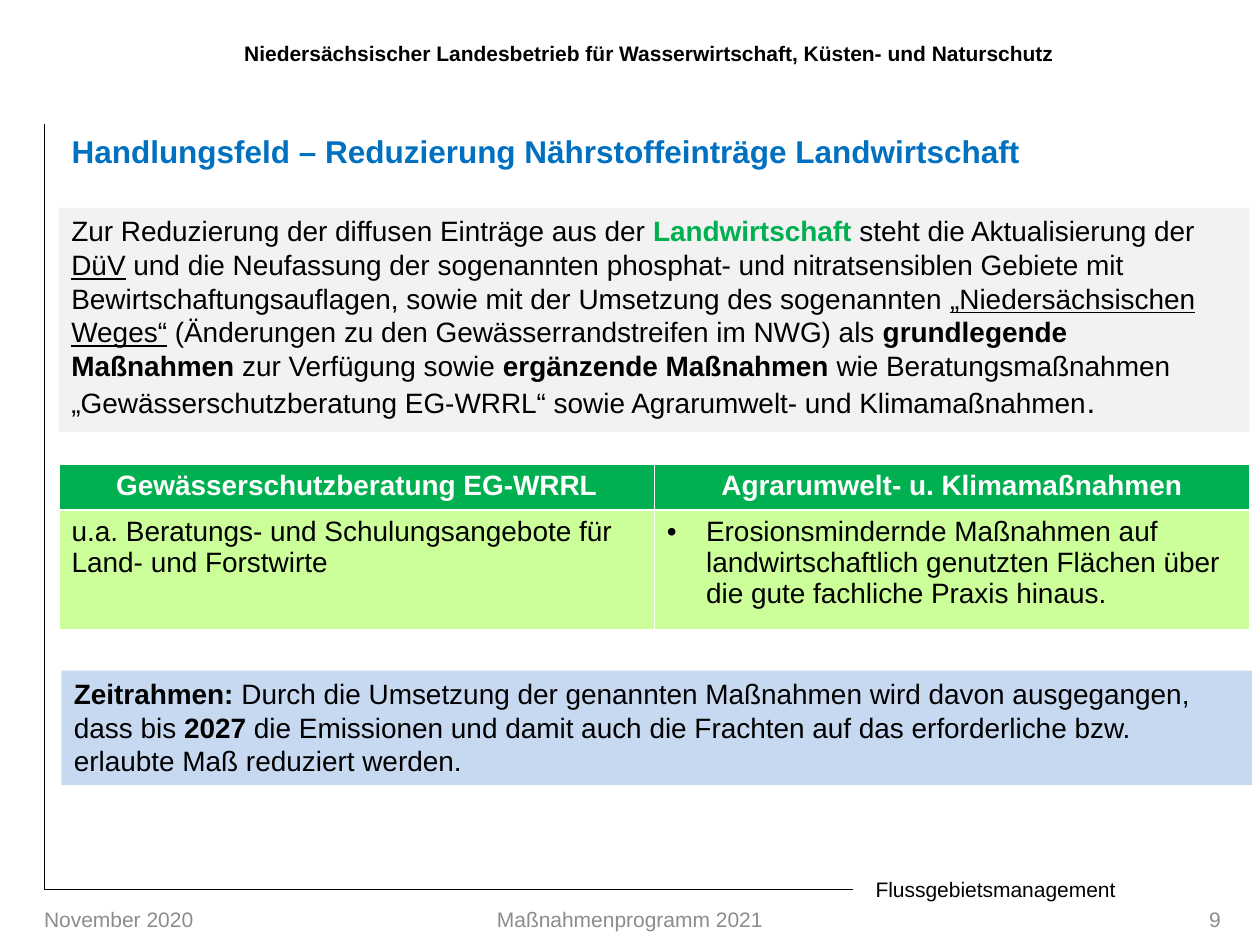
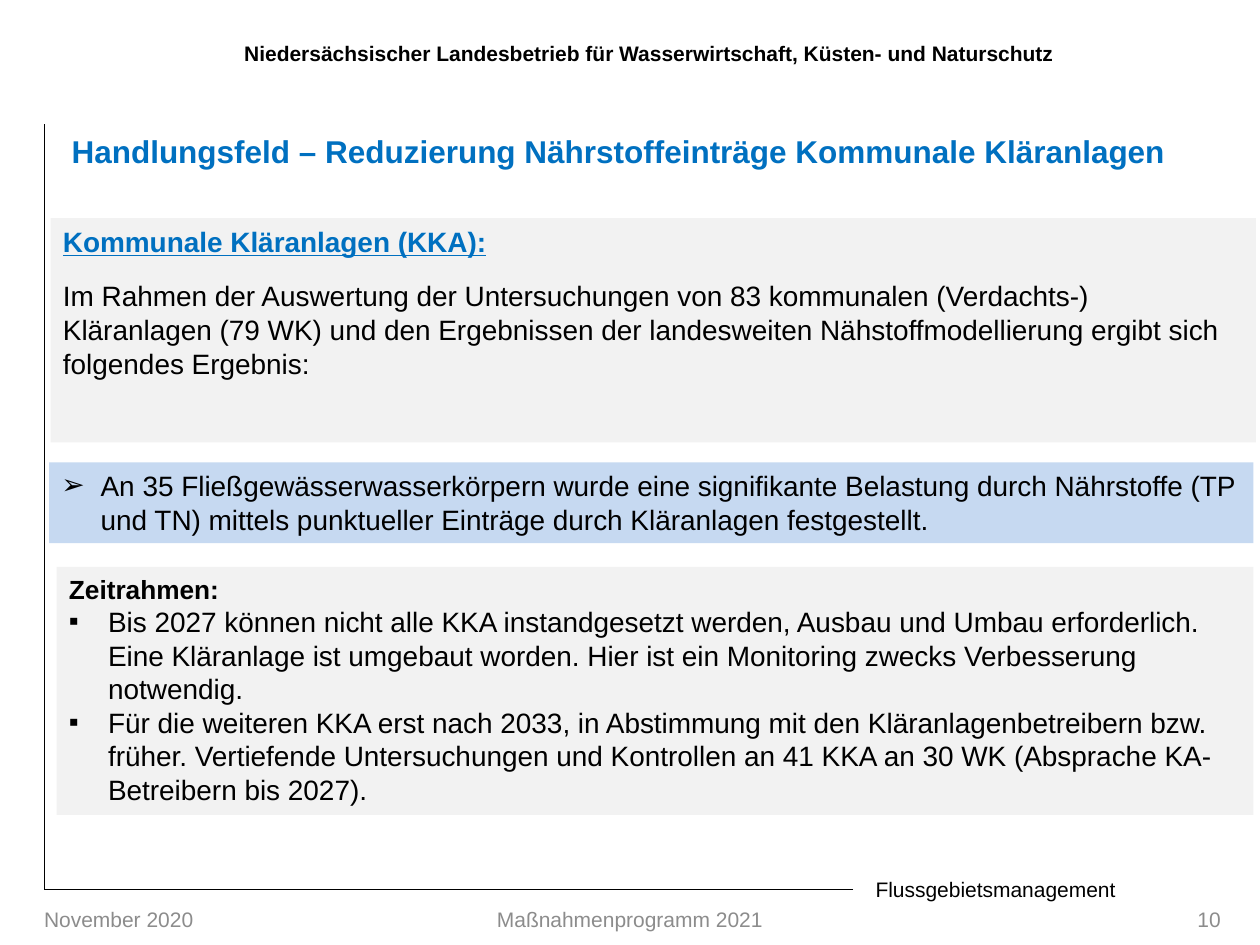
from lxml import etree
from pptx import Presentation
from pptx.dml.color import RGBColor
from pptx.enum.shapes import MSO_CONNECTOR as Connector, MSO_SHAPE as Shape
from pptx.enum.text import MSO_ANCHOR as Anchor, PP_ALIGN as Align
from pptx.oxml.ns import qn
from pptx.util import Cm, Pt

hex_color = RGBColor.from_string

BLACK, WHITE, BLUE, GREEN = "000000", "FFFFFF", "0070C0", "00B050"
FOOTER_GRAY, PANEL_GRAY, PANEL_BLUE, LIME = "8C8C8C", "F2F2F2", "C6D9F1", "CCFF99"

BODY = {"name": "Arial", "size": Pt(16), "color": BLACK, "bold": False}
TITLE = {**BODY, "size": Pt(18), "color": BLUE, "bold": True}
SMALL = {**BODY, "size": Pt(12)}
FOOTER = {**SMALL, "color": FOOTER_GRAY}
TABLE_HEAD = {**BODY, "color": WHITE, "bold": True}
BOLD = {"bold": True}
UNDERLINE = {"underline": True}


def write_text(frame, paragraphs, base=BODY, align=Align.LEFT, anchor=Anchor.TOP):
    frame.word_wrap = True
    frame.vertical_anchor = anchor
    for index, (layout, runs) in enumerate(paragraphs):
        paragraph = frame.paragraphs[0] if index == 0 else frame.add_paragraph()
        paragraph.alignment = align
        paragraph.space_before = Pt(layout.get("before", 0))
        if "bullet" in layout:
            properties = paragraph._p.get_or_add_pPr()
            properties.set("marL", str(Cm(0.79)))
            properties.set("indent", str(-Cm(0.79)))
            etree.SubElement(properties, qn("a:buFont")).set("typeface", "Arial")
            etree.SubElement(properties, qn("a:buChar")).set("char", layout["bullet"])
        for text, changes in runs:
            run = paragraph.add_run()
            run.text = text
            for name, value in {**base, **changes}.items():
                if name == "color":
                    run.font.color.rgb = hex_color(value)
                else:
                    setattr(run.font, name, value)


def add_panel(slide, left, top, width, height, color, paragraphs):
    panel = slide.shapes.add_shape(Shape.RECTANGLE, Cm(left), Cm(top), Cm(width), Cm(height))
    panel.shadow.inherit = False
    panel.fill.solid()
    panel.fill.fore_color.rgb = hex_color(color)
    panel.line.fill.background()
    write_text(panel.text_frame, paragraphs)


presentation = Presentation()
presentation.slide_width = Cm(25.4)
presentation.slide_height = Cm(19.05)

titles = {
    9: "Handlungsfeld – Reduzierung Nährstoffeinträge Landwirtschaft",
    10: "Handlungsfeld – Reduzierung Nährstoffeinträge Kommunale Kläranlagen",
}
frame_lines = [(17.2, 17.93, 0.89, 17.93), (0.89, 17.93, 0.89, 2.51)]
slides = []

for number, title_text in titles.items():
    slide = presentation.slides.add_slide(presentation.slide_layouts[5])
    slides.append(slide)

    title = slide.shapes.title
    title.left, title.top, title.width, title.height = Cm(1.19), Cm(2.54), Cm(24.1), Cm(0.99)
    write_text(title.text_frame, [({}, [(title_text, {})])], TITLE)

    for start_x, start_y, end_x, end_y in frame_lines:
        line = slide.shapes.add_connector(
            Connector.STRAIGHT, Cm(start_x), Cm(start_y), Cm(end_x), Cm(end_y)
        )
        line.line.color.rgb = hex_color(BLACK)
        line.line.width = Pt(0.75)
        etree.SubElement(line._element.spPr, qn("a:effectLst"))

    shared_texts = [
        ("Niedersächsischer Landesbetrieb für Wasserwirtschaft, Küsten- und Naturschutz",
         4.09, 0.53, 18, 1.09, {**SMALL, **BOLD}, Align.CENTER, 0.25),
        ("Flussgebietsmanagement", 17.4, 17.55, 5.61, 0.76, SMALL, Align.LEFT, 0.25),
        ("November 2020", 0.89, 18.14, 5.11, 0.76, FOOTER, Align.LEFT, 0),
        ("Maßnahmenprogramm 2021", 9.22, 18.14, 6.96, 0.76, FOOTER, Align.CENTER, 0),
        (str(number), 23.77, 18.14, 0.84, 0.76, FOOTER, Align.RIGHT, 0),
    ]
    for text, left, top, width, height, style, align, inset in shared_texts:
        box = slide.shapes.add_textbox(Cm(left), Cm(top), Cm(width), Cm(height))
        box.text_frame.margin_left = box.text_frame.margin_right = Cm(inset)
        write_text(box.text_frame, [({}, [(text, {})])], style, align, Anchor.MIDDLE)

farming, sewage = slides

add_panel(farming, 1.19, 4.19, 24, 4.52, PANEL_GRAY, [({}, [
    ("Zur Reduzierung der diffusen Einträge aus der ", {}),
    ("Landwirtschaft", {"color": GREEN, **BOLD}),
    (" steht die Aktualisierung der ", {}),
    ("DüV", UNDERLINE),
    (" und die Neufassung der sogenannten phosphat- und nitratsensiblen Gebiete mit "
     "Bewirtschaftungsauflagen, sowie mit der Umsetzung des sogenannten ", {}),
    ("„Niedersächsischen Weges“", UNDERLINE),
    (" (Änderungen zu den Gewässerrandstreifen im NWG) als ", {}),
    ("grundlegende Maßnahmen ", BOLD),
    ("zur Verfügung sowie ", {}),
    ("ergänzende Maßnahmen ", BOLD),
    ("wie Beratungsmaßnahmen „Gewässerschutzberatung EG-WRRL“ sowie Agrarumwelt- und "
     "Klimamaßnahmen", {}),
    (".", {"size": Pt(18)}),
])])

measures = [
    ("Gewässerschutzberatung EG-WRRL", {},
     "u.a. Beratungs- und Schulungsangebote für Land- und Forstwirte"),
    ("Agrarumwelt- u. Klimamaßnahmen", {"bullet": "•"},
     "Erosionsmindernde Maßnahmen auf landwirtschaftlich genutzten Flächen über die gute "
     "fachliche Praxis hinaus."),
]
table = farming.shapes.add_table(2, 2, Cm(1.19), Cm(9.35), Cm(24), Cm(3.34)).table
table.horz_banding = False
table.rows[0].height, table.rows[1].height = Cm(0.93), Cm(2.41)
for column, (heading, layout, description) in enumerate(measures):
    head, body = table.cell(0, column), table.cell(1, column)
    for cell, color in ((head, GREEN), (body, LIME)):
        cell.fill.solid()
        cell.fill.fore_color.rgb = hex_color(color)
    write_text(head.text_frame, [({}, [(heading, {})])], TABLE_HEAD, Align.CENTER)
    write_text(body.text_frame, [(layout, [(description, {})])])

add_panel(farming, 1.24, 13.52, 24, 2.31, PANEL_BLUE, [({}, [
    ("Zeitrahmen: ", BOLD),
    ("Durch die Umsetzung der genannten Maßnahmen wird davon ausgegangen, dass bis ", {}),
    ("2027", BOLD),
    (" die Emissionen und damit auch die Frachten auf das erforderliche bzw. erlaubte Maß "
     "reduziert werden.", {}),
])])

add_panel(sewage, 1.02, 4.4, 24.3, 4.52, PANEL_GRAY, [
    ({}, [("Kommunale Kläranlagen (KKA):", {"color": BLUE, **BOLD, **UNDERLINE})]),
    ({"before": 12}, [
        ("Im Rahmen der Auswertung der Untersuchungen von 83 kommunalen (Verdachts-) "
         "Kläranlagen (79 WK) und den Ergebnissen der landesweiten Nähstoffmodellierung "
         "ergibt sich folgendes Ergebnis:", {}),
    ]),
])

add_panel(sewage, 0.99, 9.32, 24.28, 1.63, PANEL_BLUE, [({"bullet": "➢"}, [
    ("An 35 Fließgewässerwasserkörpern wurde eine signifikante Belastung durch Nährstoffe "
     "(TP und TN) mittels punktueller Einträge durch Kläranlagen festgestellt.", {}),
])])

add_panel(sewage, 1.14, 11.43, 24.13, 5, PANEL_GRAY, [
    ({}, [("Zeitrahmen:", {"size": Pt(15), **BOLD})]),
    ({"bullet": "▪"}, [
        ("Bis 2027 können nicht alle KKA instandgesetzt werden, Ausbau und Umbau "
         "erforderlich. Eine Kläranlage ist umgebaut worden. Hier ist ein Monitoring zwecks "
         "Verbesserung notwendig.", {}),
    ]),
    ({"bullet": "▪"}, [
        ("Für die weiteren KKA erst nach 2033, in Abstimmung mit den Kläranlagenbetreibern "
         "bzw. früher. Vertiefende Untersuchungen und Kontrollen an 41 KKA an 30 WK "
         "(Absprache KA-Betreibern bis 2027).", {}),
    ]),
])

presentation.save("out.pptx")
